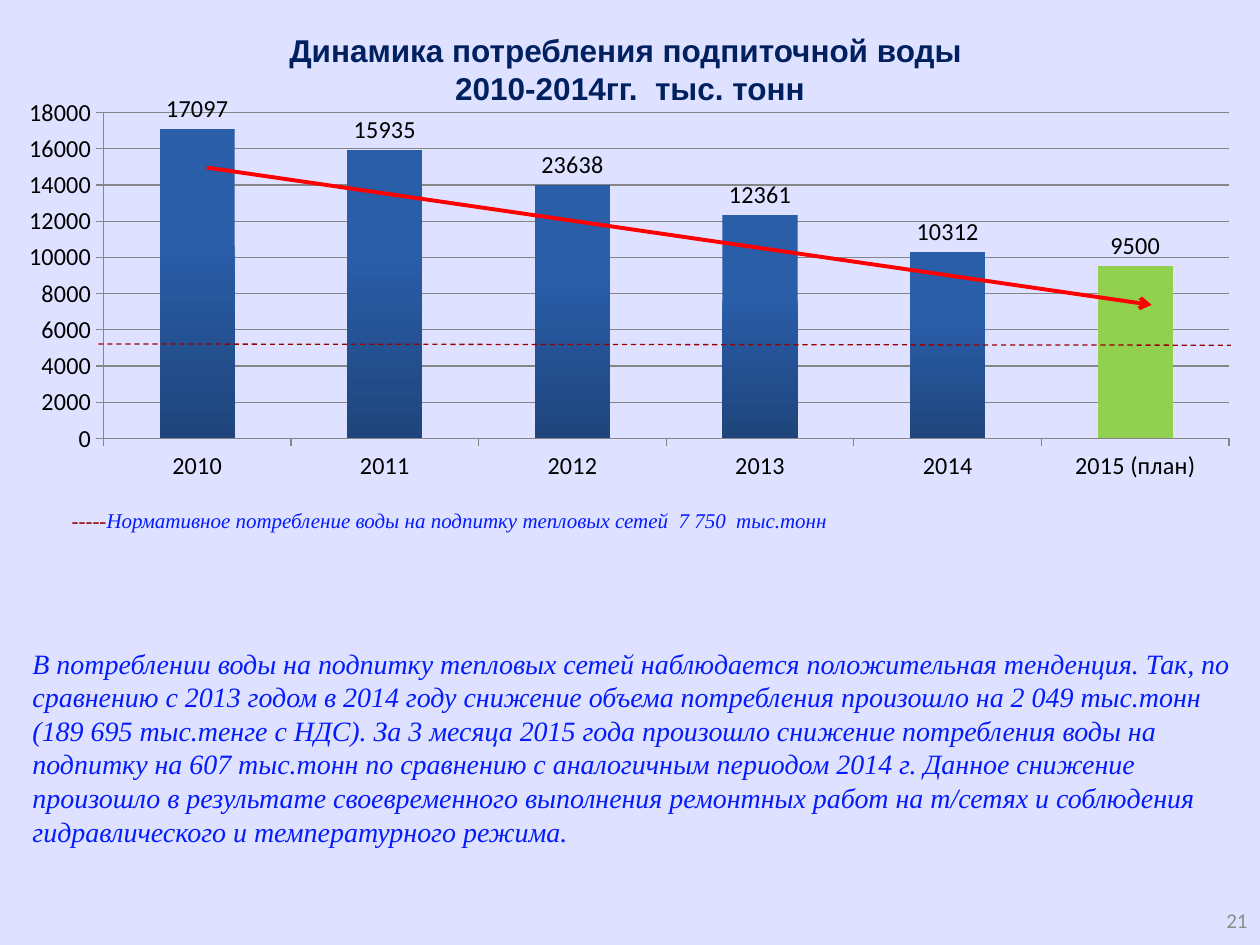
from lxml import etree
from pptx import Presentation
from pptx.chart.data import CategoryChartData
from pptx.dml.color import RGBColor
from pptx.enum.chart import XL_CHART_TYPE, XL_LABEL_POSITION, XL_TICK_MARK
from pptx.enum.dml import MSO_LINE
from pptx.enum.shapes import MSO_CONNECTOR
from pptx.enum.text import MSO_ANCHOR, PP_ALIGN
from pptx.oxml import parse_xml
from pptx.oxml.ns import nsdecls, qn
from pptx.util import Inches, Pt

COLUMN = XL_CHART_TYPE.COLUMN_CLUSTERED
OUTSIDE_END = XL_LABEL_POSITION.OUTSIDE_END
TICK_OUT = XL_TICK_MARK.OUTSIDE
DASH = MSO_LINE.DASH
STRAIGHT = MSO_CONNECTOR.STRAIGHT
TOP, MIDDLE = MSO_ANCHOR.TOP, MSO_ANCHOR.MIDDLE
LEFT, CENTER, RIGHT = PP_ALIGN.LEFT, PP_ALIGN.CENTER, PP_ALIGN.RIGHT

COLORS = {
    "background": "DEE1FF", "navy": "002060", "blue": "041CFC", "norm": "990000",
    "trend": "FF0000", "bar_top": "2A5EA9", "bar_bottom": "1F457C", "plan": "92D050",
    "grid": "868686", "number": "8C8C8C", "black": "000000",
}
FORMATS = {
    "title": {"name": "Arial", "size": Pt(18), "bold": True, "italic": False},
    "norm": {"name": "Times New Roman", "size": Pt(12), "italic": True},
    "body": {"name": "Times New Roman", "size": Pt(16), "italic": True},
    "number": {"name": "Calibri", "size": Pt(12)},
    "chart": {"name": "Calibri", "size": Pt(14)},
}
YEARS = ["2010", "2011", "2012", "2013", "2014", "2015 (план)"]
VOLUMES = [17097, 15935, 13971, 12361, 10312, 9500]
PLAN_INDEX = 5
CUSTOM_LABELS = {2: "23638"}
PLOT_AREA = {"x": 0.047, "y": 0.059, "w": 0.953, "h": 0.789}
TITLE = "Динамика потребления подпиточной воды \v2010-2014гг.  тыс. тонн"
NORM = "Нормативное потребление воды на подпитку тепловых сетей  7 750  тыс.тонн"
BODY = (
    "В потреблении воды на подпитку тепловых сетей наблюдается положительная тенденция. "
    "Так, по сравнению с 2013 годом в 2014 году снижение объема потребления произошло на "
    "2 049 тыс.тонн (189 695 тыс.тенге с НДС). За 3 месяца 2015 года произошло снижение "
    "потребления воды на подпитку на 607 тыс.тонн по сравнению с аналогичным периодом "
    "2014 г. Данное снижение произошло в результате своевременного выполнения ремонтных "
    "работ на т/сетях и соблюдения гидравлического и температурного режима."
)


def rgb(color):
    return RGBColor.from_string(COLORS[color])


class SlideBuilder:
    def __init__(self, prs):
        self.s = prs.slides.add_slide(prs.slide_layouts[5])
        fill = self.s.background.fill
        fill.solid()
        fill.fore_color.rgb = rgb("background")

    def style(self, font, fmt, color):
        for name, value in FORMATS[fmt].items():
            setattr(font, name, value)
        font.color.rgb = rgb(color)

    def title(self, text, box):
        sp = self.s.shapes.title
        sp.left, sp.top, sp.width, sp.height = map(Inches, box)
        tf = sp.text_frame
        tf.vertical_anchor = MIDDLE
        tf.text = text
        p = tf.paragraphs[0]
        p.alignment = CENTER
        for r in p.runs:
            self.style(r.font, "title", "navy")

    def text(self, parts, box, fmt, align=LEFT, anchor=TOP):
        tf = self.s.shapes.add_textbox(*map(Inches, box)).text_frame
        tf.word_wrap = True
        tf.vertical_anchor = anchor
        p = tf.paragraphs[0]
        p.alignment = align
        for text, color in parts:
            r = p.add_run()
            r.text = text
            self.style(r.font, fmt, color)

    def line(self, start, end, color, width, dash=None, arrow=False):
        sp = self.s.shapes.add_connector(STRAIGHT, *map(Inches, start + end))
        sp.line.color.rgb = rgb(color)
        sp.line.width = Pt(width)
        if dash:
            sp.line.dash_style = dash
        if arrow:
            ln = sp.line._get_or_add_ln()
            etree.SubElement(ln, qn("a:tailEnd"), type="arrow")
        etree.SubElement(sp._element.spPr, qn("a:effectLst"))

    def chart(self, box):
        data = CategoryChartData()
        data.categories = YEARS
        data.add_series("Series 1", VOLUMES)
        chart = self.s.shapes.add_chart(COLUMN, *map(Inches, box), data).chart
        chart.has_title = chart.has_legend = False
        self.style(chart.font, "chart", "black")
        self.axes(chart)
        plot = chart.plots[0]
        plot.gap_width = 150
        plot.vary_by_categories = False
        self.bars(plot.series[0])
        self.labels(plot)
        self.plot_area(chart)

    def axes(self, chart):
        axis = chart.value_axis
        axis.minimum_scale, axis.maximum_scale, axis.major_unit = 0, 18000, 2000
        axis.has_major_gridlines = True
        for ax in (axis, chart.category_axis):
            ax.major_tick_mark = TICK_OUT
        for item in (axis, chart.category_axis, axis.major_gridlines):
            item.format.line.color.rgb = rgb("grid")
            item.format.line.width = Pt(0.75)

    def bars(self, series):
        fill = series.format.fill
        fill.gradient()
        fill.gradient_angle = 270
        stops = zip(fill.gradient_stops, ("bar_top", "bar_bottom"), (0.35, 1))
        for stop, color, position in stops:
            stop.color.rgb = rgb(color)
            stop.position = position
        plan = series.points[PLAN_INDEX].format.fill
        plan.solid()
        plan.fore_color.rgb = rgb("plan")

    def labels(self, plot):
        plot.has_data_labels = True
        labels = plot.series[0].data_labels
        labels.show_value = True
        labels.position = OUTSIDE_END
        self.style(labels.font, "chart", "black")
        for index, text in CUSTOM_LABELS.items():
            label = plot.series[0].points[index].data_label
            label.position = OUTSIDE_END
            r = label.text_frame.paragraphs[0].add_run()
            r.text = text
            self.style(r.font, "chart", "black")

    def plot_area(self, chart):
        root = chart._chartSpace.find(qn("c:chart"))
        area = root.find(qn("c:plotArea"))
        for old in area.findall(qn("c:layout")):
            area.remove(old)
        layout = etree.Element(qn("c:layout"))
        manual = etree.SubElement(layout, qn("c:manualLayout"))
        settings = {"layoutTarget": "inner", "xMode": "edge", "yMode": "edge", **PLOT_AREA}
        for name, value in settings.items():
            etree.SubElement(manual, qn(f"c:{name}"), val=str(value))
        area.insert(0, layout)
        clear = f'<c:spPr {nsdecls("c", "a")}><a:noFill/><a:ln><a:noFill/></a:ln></c:spPr>'
        area.append(parse_xml(clear))
        root.addnext(parse_xml(clear))


def main():
    prs = Presentation()
    prs.slide_width, prs.slide_height = Inches(10), Inches(7.5)
    slide = SlideBuilder(prs)
    slide.chart((0.23, 0.7, 9.53, 3.28))
    slide.line((0.78, 2.73), (9.77, 2.74), "norm", 0.75, dash=DASH)
    slide.text([("21", "number")], (7.67, 7.1, 2.33, 0.4), "number", RIGHT, MIDDLE)
    slide.text([("-----", "norm"), (NORM, "blue")], (0.47, 3.98, 9.06, 0.3), "norm")
    slide.title(TITLE, (0, 0.23, 10, 0.63))
    slide.line((1.64, 1.33), (9.14, 2.42), "trend", 2.25, arrow=True)
    slide.text([(BODY, "blue")], (0.16, 5.08, 9.84, 1.72), "body")
    prs.save("out.pptx")


if __name__ == "__main__":
    main()
